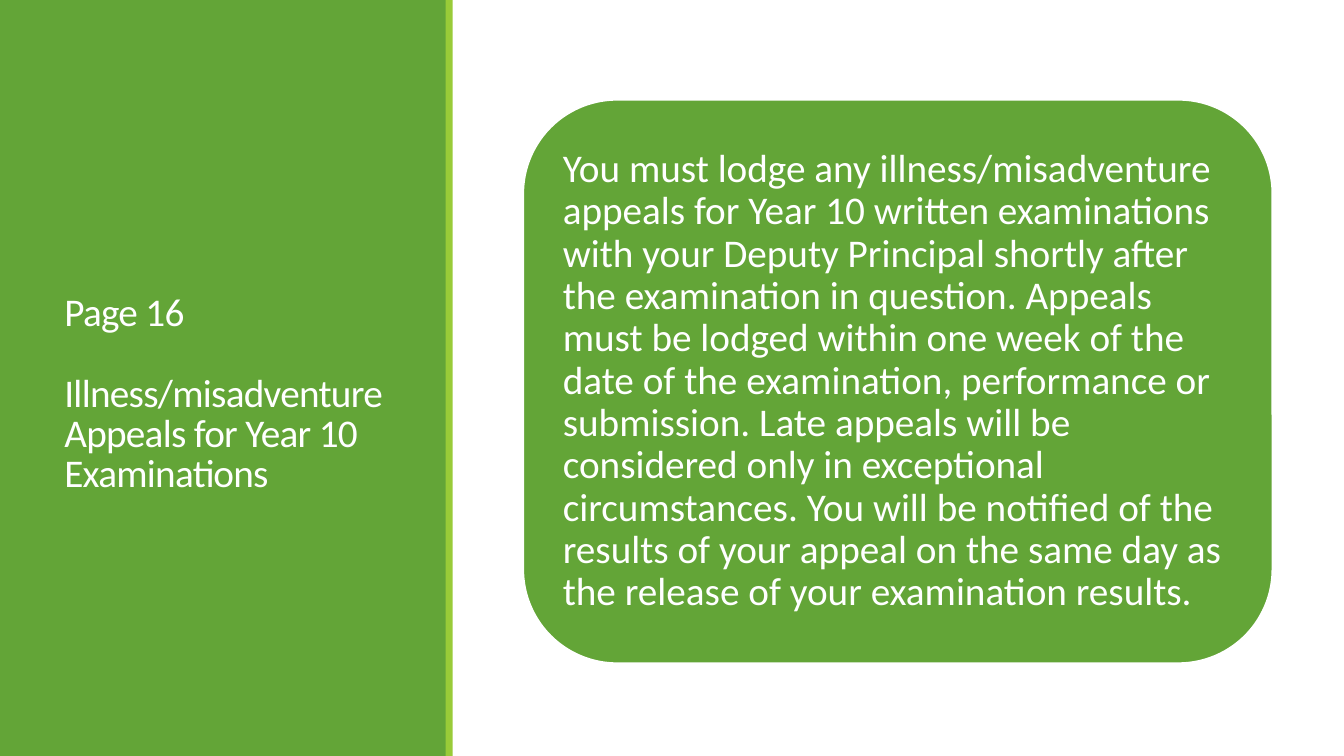
from lxml import etree
from pptx import Presentation
from pptx.dml.color import RGBColor
from pptx.enum.shapes import MSO_SHAPE
from pptx.enum.text import MSO_ANCHOR, PP_ALIGN
from pptx.util import Inches, Pt

RECTANGLE = MSO_SHAPE.RECTANGLE
ROUNDED = MSO_SHAPE.ROUNDED_RECTANGLE
MIDDLE = MSO_ANCHOR.MIDDLE
LEFT = PP_ALIGN.LEFT

SLIDE_WIDTH, SLIDE_HEIGHT = Inches(13.33), Inches(7.5)
GREEN, LIME, WHITE = "63A537", "99CB38", "FFFFFF"

HEADING = ["Page 16", "Illness/misadventure Appeals for Year 10 Examinations"]
APPEAL_RULES = [
    "You must lodge any illness/misadventure appeals for Year 10 written "
    "examinations with your Deputy Principal shortly after the examination in "
    "question. Appeals must be lodged within one week of the date of the "
    "examination, performance or submission. Late appeals will be considered "
    "only in exceptional circumstances. You will be notified of the results of "
    "your appeal on the same day as the release of your examination results."
]


def colour(value):
    return RGBColor.from_string(value)


def area(left, top, width, height):
    """Turn percentages of the slide into lengths."""
    return (int(SLIDE_WIDTH * left / 100), int(SLIDE_HEIGHT * top / 100),
            int(SLIDE_WIDTH * width / 100), int(SLIDE_HEIGHT * height / 100))


def add_block(page, kind, place, fill, line=None):
    block = page.shapes.add_shape(kind, *area(*place))
    block.shadow.inherit = False
    block.fill.solid()
    block.fill.fore_color.rgb = colour(fill)
    if line:
        block.line.color.rgb = colour(line)
        block.line.width = Pt(1.25)
    else:
        block.line.fill.background()
    return block


def write(box, paragraphs, size=28, ink=WHITE, font="Calibri", leading=1.0,
          gap=0, tracking=0, side=0.1, edge=0.05):
    frame = box.text_frame
    frame.word_wrap = True
    frame.vertical_anchor = MIDDLE
    frame.margin_left = frame.margin_right = Inches(side)
    frame.margin_top = frame.margin_bottom = Inches(edge)
    for index, text in enumerate(paragraphs):
        para = frame.add_paragraph() if index else frame.paragraphs[0]
        para.alignment = LEFT
        para.line_spacing = leading
        para.space_before = Pt(gap if index else 0)
        span = para.add_run()
        span.text = text
        span.font.name = font
        span.font.size = Pt(size)
        span.font.color.rgb = colour(ink)
        if tracking:
            span.font._element.set("spc", str(int(tracking * 100)))


def main():
    deck = Presentation()
    deck.slide_width, deck.slide_height = SLIDE_WIDTH, SLIDE_HEIGHT
    page = deck.slides.add_slide(deck.slide_layouts[6])

    # Side panel with its accent strip
    add_block(page, RECTANGLE, (0, 0, 33.23, 100), GREEN)
    add_block(page, RECTANGLE, (33.16, 0, 0.53, 100), LIME)

    # Heading on the panel
    heading = page.shapes.add_textbox(*area(4.05, 10.2, 25.28, 84.13))
    write(heading, HEADING, leading=0.85, gap=29, tracking=-0.5)

    # Card with the appeal rules
    card = add_block(page, ROUNDED, (38.93, 13.2, 55.74, 74.53), GREEN, line=WHITE)
    write(card, APPEAL_RULES, leading=0.9, side=0.12, edge=0.12)

    deck.save("out.pptx")


if __name__ == "__main__":
    main()
